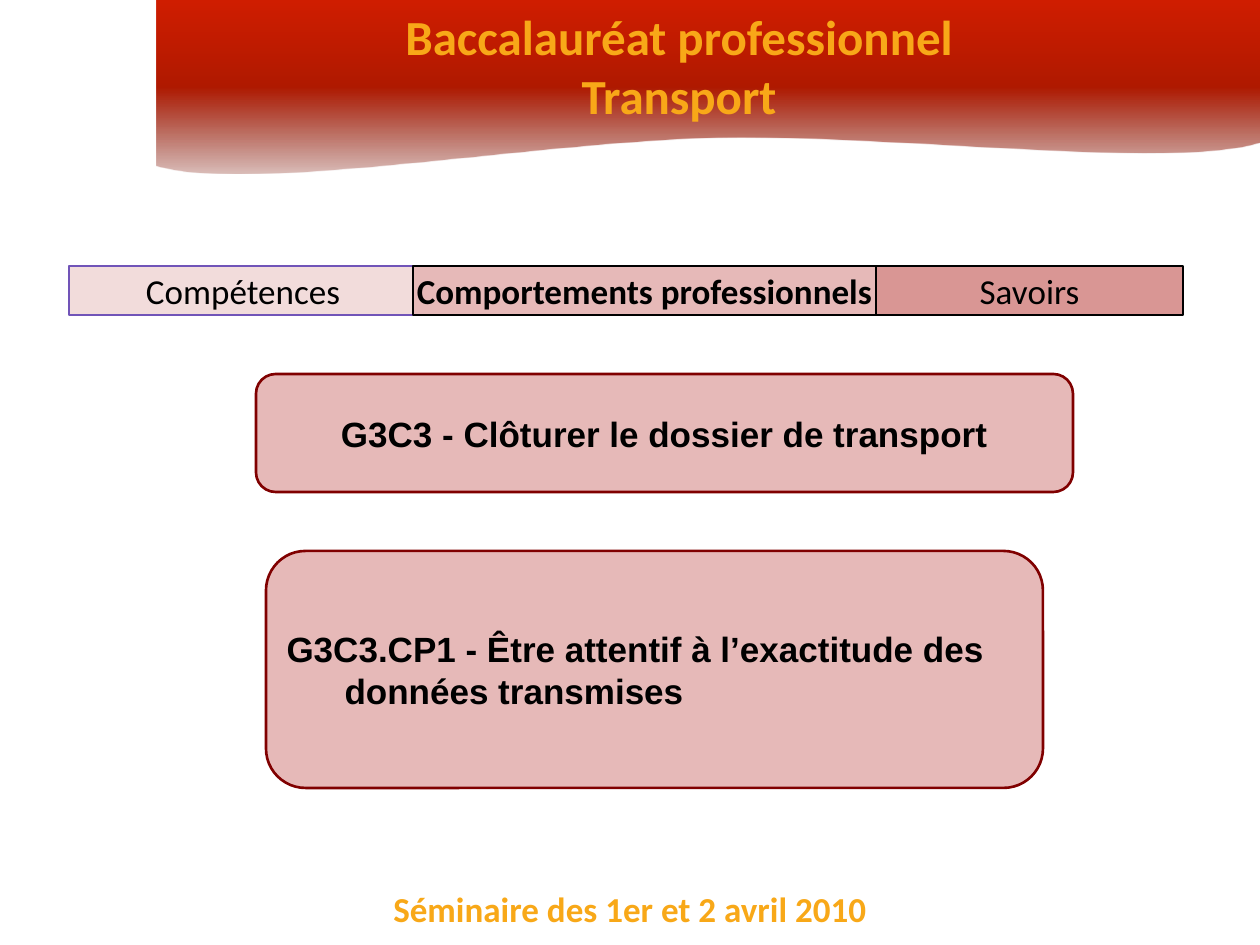
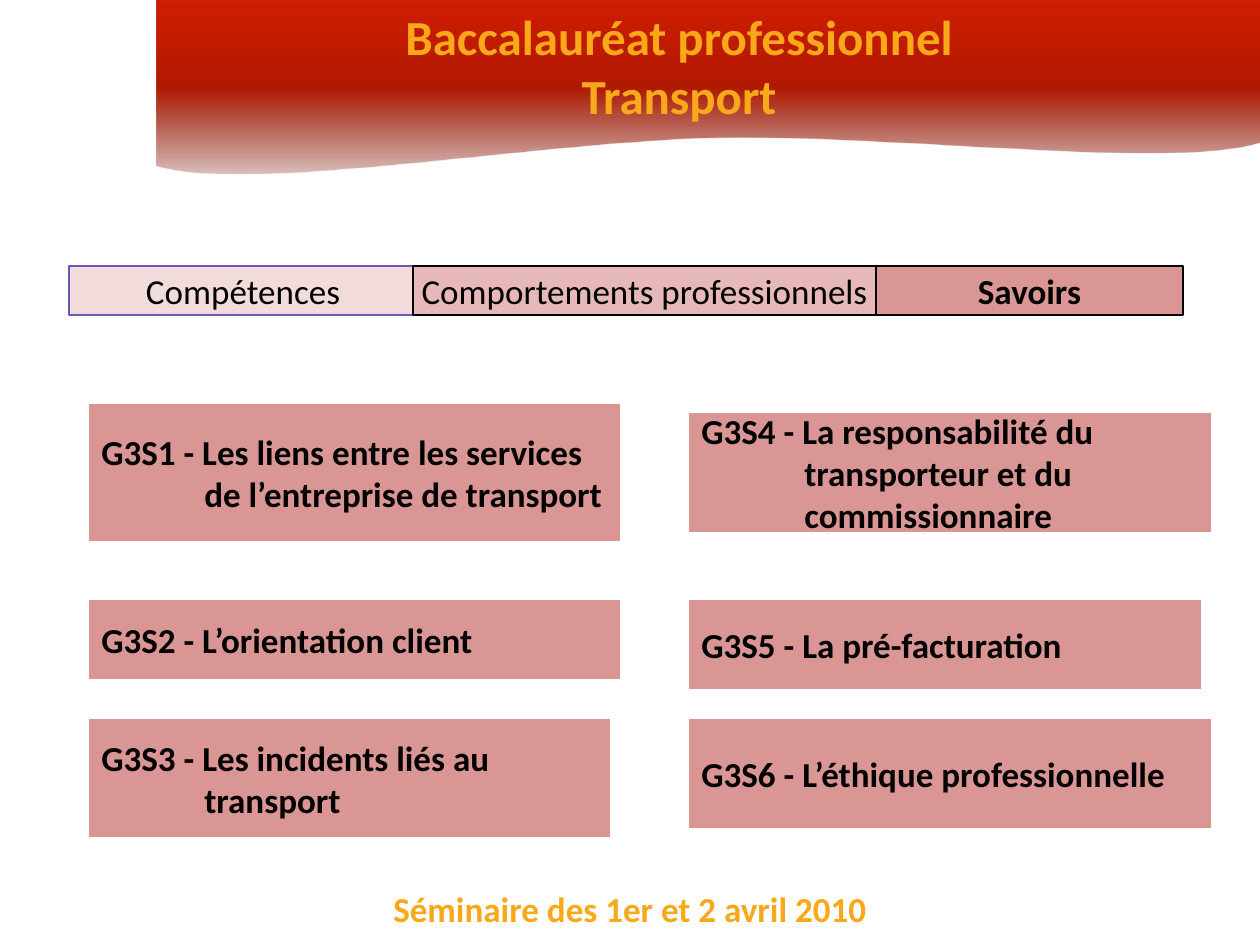
import pptx
import pptx.util
import pptx.dml.color
import pptx.enum.shapes
import pptx.enum.text
import pptx.oxml
from dataclasses import dataclass
from lxml import etree

SHAPE = pptx.enum.shapes.MSO_SHAPE
ALIGN = pptx.enum.text.PP_ALIGN
ANCHOR = pptx.enum.text.MSO_ANCHOR
DRAWING = "http://schemas.openxmlformats.org/drawingml/2006/main"
PX_PER_INCH = 126


@dataclass(frozen=True)
class Theme:
    accent: str = "F8A818"
    text: str = "000000"
    pale: str = "F2DCDB"
    pink: str = "E6B9B8"
    rose: str = "D99694"
    maroon: str = "800000"
    violet: str = "7154B8"
    band_stops: tuple = ((0, "7B1100", 27), (50, "AF1900", 100), (100, "D01D00", 100))
    font: str = "Calibri"
    box_font: str = "Arial"
    title_size: int = 28
    body_size: int = 20


THEME = Theme()

# Tab label, left, width, fill, line
TABS = [
    ("Compétences", 69, 348, THEME.pale, THEME.violet),
    ("Comportements professionnels", 413, 463, THEME.pink, THEME.text),
    ("Savoirs", 876, 307, THEME.rose, THEME.text),
]

# Lines of text, left, top, width, height
KNOWLEDGE_CARDS = [
    (["G3S1 - Les liens entre les services", "de l’entreprise de transport"], 89, 404, 531, 137),
    (["G3S2 - L’orientation client"], 89, 600, 531, 79),
    (["G3S3 - Les incidents liés au", "transport"], 89, 719, 521, 118),
    (["G3S4 - La responsabilité du", "transporteur et du", "commissionnaire"], 689, 413, 522, 119),
    (["G3S5 - La pré-facturation"], 689, 600, 512, 89),
    (["G3S6 - L’éthique professionnelle"], 689, 719, 522, 109),
]


def px(length):
    return pptx.util.Emu(round(length * 914400 / PX_PER_INCH))


def rgb(color):
    return pptx.dml.color.RGBColor.from_string(color)


def add_run(paragraph, text, size=THEME.body_size, color=THEME.text, bold=True, font=THEME.font):
    run = paragraph.add_run()
    run.text = text
    run.font.size = pptx.util.Pt(size)
    run.font.color.rgb = rgb(color)
    run.font.bold = bold
    run.font.name = font


def set_hanging(paragraph, distance):
    properties = paragraph._p.get_or_add_pPr()
    properties.set("marL", str(px(distance)))
    properties.set("indent", str(-px(distance)))


def add_box(slide, kind, bounds, fill, line=None, line_width=0.75):
    shape = slide.shapes.add_shape(kind, *map(px, bounds))
    shape.shadow.inherit = False
    shape.fill.solid()
    shape.fill.fore_color.rgb = rgb(fill)
    if line:
        shape.line.color.rgb = rgb(line)
        shape.line.width = pptx.util.Pt(line_width)
    else:
        shape.line.fill.background()
    shape.text_frame.vertical_anchor = ANCHOR.MIDDLE
    shape.text_frame.word_wrap = True
    return shape


def add_tabs(slide, active):
    for label, left, width, fill, line in TABS:
        shape = add_box(slide, SHAPE.FLOWCHART_PROCESS, (left, 266, width, 49), fill, line)
        shape.text_frame.word_wrap = False
        paragraph = shape.text_frame.paragraphs[0]
        paragraph.alignment = ALIGN.CENTER
        add_run(paragraph, label, bold=label == active)


def add_rounded_box(slide, text, bounds, alignment, hanging=0):
    shape = add_box(slide, SHAPE.FLOWCHART_ALTERNATE_PROCESS, bounds, THEME.pink, THEME.maroon, 1.5)
    frame = shape.text_frame
    frame.margin_left = frame.margin_right = frame.margin_top = frame.margin_bottom = px(9)
    paragraph = frame.paragraphs[0]
    paragraph.alignment = alignment
    set_hanging(paragraph, hanging)
    add_run(paragraph, text, font=THEME.box_font)


def add_card(slide, lines, *bounds):
    shape = add_box(slide, SHAPE.FLOWCHART_PROCESS, bounds, THEME.rose)
    paragraph = shape.text_frame.paragraphs[0]
    paragraph.alignment = ALIGN.LEFT
    set_hanging(paragraph, 103)
    for index, line in enumerate(lines):
        if index:
            paragraph.add_line_break()
        add_run(paragraph, line)


def curve_points(start, control_1, control_2, end, steps=24):
    for step in range(1, steps + 1):
        t = step / steps
        weights = ((1 - t) ** 3, 3 * t * (1 - t) ** 2, 3 * t * t * (1 - t), t ** 3)
        corners = (start, control_1, control_2, end)
        yield tuple(px(sum(w * p[axis] for w, p in zip(weights, corners))) for axis in (0, 1))


def set_gradient(shape, stops):
    shape.fill.background()
    properties = shape._element.spPr
    old_fill = properties.find(f"{{{DRAWING}}}noFill")
    stop_xml = "".join(
        f'<a:gs pos="{position * 1000}"><a:srgbClr val="{color}">'
        f'<a:alpha val="{alpha * 1000}"/></a:srgbClr></a:gs>'
        for position, color, alpha in stops
    )
    gradient = etree.fromstring(
        f'<a:gradFill xmlns:a="{DRAWING}" rotWithShape="1"><a:gsLst>{stop_xml}</a:gsLst>'
        '<a:lin ang="16200000" scaled="0"/></a:gradFill>',
        pptx.oxml.oxml_parser,
    )
    properties.replace(old_fill, gradient)


def add_band(slide):
    right, middle, left = (1260, 142), (718, 137), (157, 165)
    builder = slide.shapes.build_freeform(px(157), 0, scale=1.0)
    points = [(px(1260), 0), tuple(map(px, right))]
    points += curve_points(right, (1171, 169), (902, 134), middle)
    points += curve_points(middle, (534, 141), (251, 193), left)
    builder.add_line_segments(points, close=True)
    band = builder.convert_to_shape()
    band.shadow.inherit = False
    band.line.fill.background()
    set_gradient(band, THEME.band_stops)
    return band


def add_footer(slide):
    footer = slide.shapes.add_textbox(px(315), px(881), px(630), px(55))
    footer.text_frame.word_wrap = True
    paragraph = footer.text_frame.paragraphs[0]
    paragraph.alignment = ALIGN.CENTER
    add_run(paragraph, "Séminaire des 1er et 2 avril 2010", color=THEME.accent)
    return footer


def prepare_layout(layout, slide):
    """Move the shared band and footer to the layout and place its title."""
    for shape in (add_band(slide), add_footer(slide)):
        layout.shapes._spTree.append(shape._element)
    title = next(item for item in layout.placeholders if item.placeholder_format.idx == 0)
    title.left, title.top, title.width, title.height = map(px, (364, 0, 630, 131))


def write_title(slide):
    frame = slide.shapes.title.text_frame
    frame.vertical_anchor = ANCHOR.TOP
    frame.auto_size = pptx.enum.text.MSO_AUTO_SIZE.NONE
    for index, text in enumerate(("Baccalauréat professionnel", "Transport")):
        paragraph = frame.add_paragraph() if index else frame.paragraphs[0]
        paragraph.alignment = ALIGN.CENTER
        add_run(paragraph, text, THEME.title_size, THEME.accent)


def main():
    presentation = pptx.Presentation()
    presentation.slide_width, presentation.slide_height = px(1260), px(945)
    layout = presentation.slide_layouts[5]
    behaviour_slide = presentation.slides.add_slide(layout)
    prepare_layout(layout, behaviour_slide)

    # Professional behaviours
    write_title(behaviour_slide)
    add_tabs(behaviour_slide, "Comportements professionnels")
    add_rounded_box(behaviour_slide, "G3C3 - Clôturer le dossier de transport",
                    (256, 374, 817, 118), ALIGN.CENTER)
    add_rounded_box(behaviour_slide, "G3C3.CP1 - Être attentif à l’exactitude des données transmises",
                    (266, 551, 777, 237), ALIGN.LEFT, hanging=58)

    # Knowledge
    knowledge_slide = presentation.slides.add_slide(layout)
    write_title(knowledge_slide)
    add_tabs(knowledge_slide, "Savoirs")
    for card in KNOWLEDGE_CARDS:
        add_card(knowledge_slide, *card)

    presentation.save("out.pptx")


if __name__ == "__main__":
    main()
